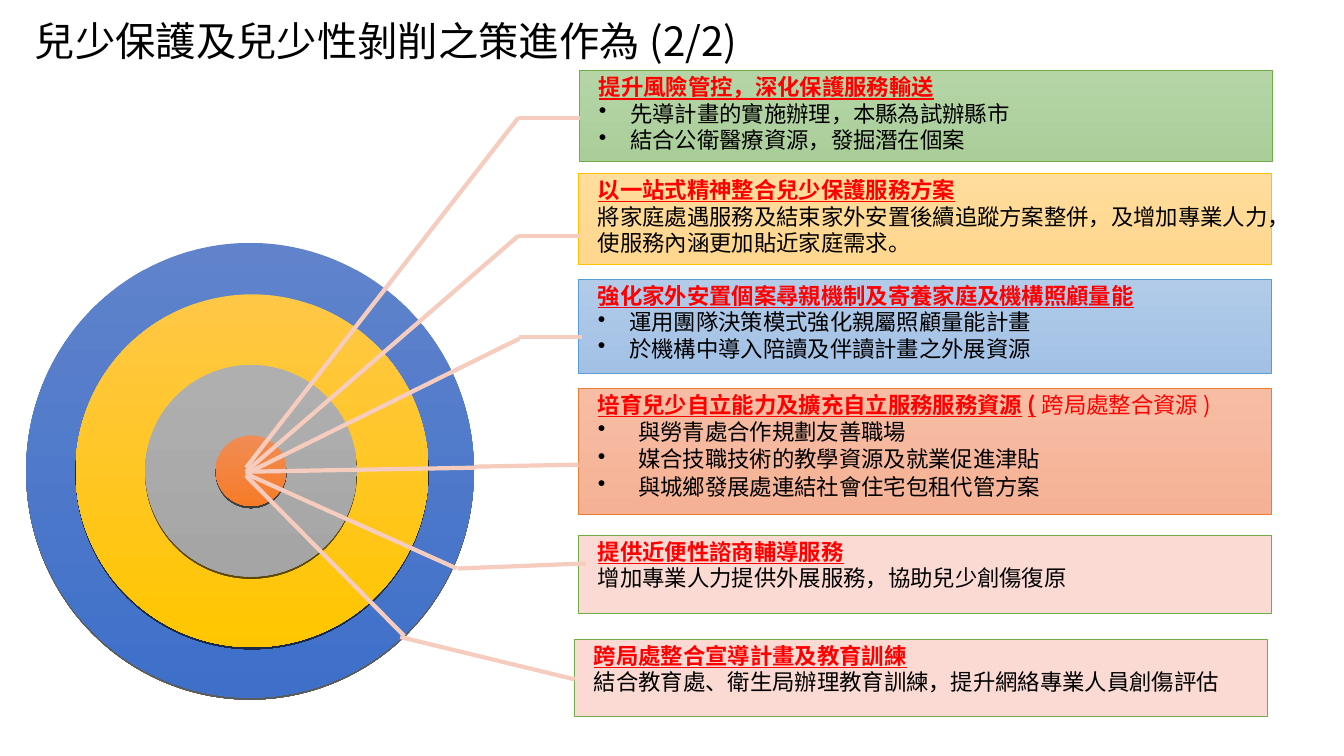
from lxml import etree
from pptx import Presentation
from pptx.dml.color import RGBColor
from pptx.enum.shapes import MSO_CONNECTOR, MSO_SHAPE
from pptx.enum.text import MSO_ANCHOR, PP_ALIGN
from pptx.oxml import parse_xml
from pptx.oxml.ns import nsdecls, qn
from pptx.util import Inches, Pt

LINE = MSO_CONNECTOR.STRAIGHT
RECT, OVAL = MSO_SHAPE.RECTANGLE, MSO_SHAPE.OVAL
TOP, MIDDLE = MSO_ANCHOR.TOP, MSO_ANCHOR.MIDDLE
LEFT, CENTER = PP_ALIGN.LEFT, PP_ALIGN.CENTER

FONT = "Noto Sans CJK TC"
COLS, ROWS = 133.3, 75  # grid cells across and down the slide

BLACK = RGBColor(0x00, 0x00, 0x00)
RED = RGBColor(0xFF, 0x00, 0x00)
PINK = RGBColor(0xF6, 0xCC, 0xBE)
ROSE = RGBColor(0xFA, 0xDA, 0xD3)
GREEN = RGBColor(0x70, 0xAD, 0x47)
GOLD = RGBColor(0xFF, 0xC0, 0x00)
BLUE = RGBColor(0x5B, 0x9B, 0xD5)
RUST = RGBColor(0xED, 0x7D, 0x31)
LEAF = (RGBColor(0xB5, 0xD5, 0xA7), RGBColor(0xAA, 0xCE, 0x99))
SAND = (RGBColor(0xFF, 0xDD, 0x9C), RGBColor(0xFF, 0xD7, 0x8E))
SKY = (RGBColor(0xB1, 0xCB, 0xE9), RGBColor(0xA3, 0xC1, 0xE5))
PEACH = (RGBColor(0xF7, 0xBD, 0xA4), RGBColor(0xF5, 0xB1, 0x95))
PLAIN = (ROSE, ROSE)

# Rings: left, top, width, height, fill
RINGS = [
    (2.6, 24.1, 44.4, 45.1, (RGBColor(0x60, 0x83, 0xCB), RGBColor(0x3E, 0x70, 0xCA))),
    (7.5, 29.2, 35, 35, (RGBColor(0xFF, 0xC7, 0x46), RGBColor(0xFF, 0xC6, 0x00))),
    (14.4, 36.2, 21, 21, (RGBColor(0xAF, 0xAF, 0xAF), RGBColor(0xA5, 0xA5, 0xA5))),
    (21.4, 43.2, 7, 7, (RGBColor(0xF1, 0x8C, 0x55), RGBColor(0xF6, 0x7B, 0x28))),
]

# Cards: left, top, height, fill, edge, heading, side note, body, bullet indent
WIDE = 68.7
CARDS = [
    (57.5, 7, 9, LEAF, GREEN, "提升風險管控，深化保護服務輸送", "",
     ["先導計畫的實施辦理，本縣為試辦縣市", "結合公衛醫療資源，發掘潛在個案"], 3.1),
    (57.4, 17.2, 9, SAND, GOLD, "以一站式精神整合兒少保護服務方案", "",
     ["將家庭處遇服務及結束家外安置後續追蹤方案整併，及增加專業人力，使服務內涵更加貼近家庭需求。"], 0),
    (57.4, 27.7, 9.3, SKY, BLUE, "強化家外安置個案尋親機制及寄養家庭及機構照顧量能", "",
     ["運用團隊決策模式強化親屬照顧量能計畫", "於機構中導入陪讀及伴讀計畫之外展資源"], 3.1),
    (57.4, 38.5, 12.5, PEACH, RUST, "培育兒少自立能力及擴充自立服務服務資源(", "跨局處整合資源)",
     ["與勞青處合作規劃友善職場", "媒合技職技術的教學資源及就業促進津貼",
      "與城鄉發展處連結社會住宅包租代管方案"], 4),
    (57.4, 53.1, 7.8, PLAIN, GREEN, "提供近便性諮商輔導服務", "",
     ["增加專業人力提供外展服務，協助兒少創傷復原"], 0),
    (57, 63.4, 7.7, PLAIN, GREEN, "跨局處整合宣導計畫及教育訓練", "",
     ["結合教育處、衛生局辦理教育訓練，提升網絡專業人員創傷評估"], 0),
]

# Leaders: row at the hub, ray end, stub start, stub end
HUB = 24.4
LEADS = [
    (46.4, (51.4, 11.7), (51.4, 11.7), (57.5, 11.7)),
    (46.8, (51.4, 23.4), (51.4, 23.4), (57.5, 23.4)),
    (47, (51.5, 33.6), (51.5, 33.4), (57.7, 33.4)),
    (46.8, (47.1, 46.4), (47, 46.3), (57.4, 46.1)),
    (47, (45.3, 56.4), (45.4, 56.4), (58.1, 55.9)),
    (47.2, (40.1, 63.1), (39.7, 63.2), (57, 67.4)),
]


class Board:
    def __init__(self, deck):
        self.deck = deck
        self.slide = deck.slides.add_slide(deck.slide_layouts[5])

    def x(self, cols):
        return round(self.deck.slide_width * cols / COLS)

    def y(self, rows):
        return round(self.deck.slide_height * rows / ROWS)

    def box(self, x, y, w, h):
        return self.x(x), self.y(y), self.x(w), self.y(h)

    def style(self, font, size, color, bold=False):
        font.name, font.size, font.bold = FONT, Pt(size), bold
        font.underline = bold
        font.color.rgb = color

    def asian(self, para):
        for latin in para._p.findall(".//" + qn("a:latin")):
            latin.addnext(parse_xml(f'<a:ea {nsdecls("a")} typeface="{FONT}"/>'))

    def title(self, text, *area):
        head = self.slide.shapes.title
        head.left, head.top, head.width, head.height = self.box(*area)
        frame = head.text_frame
        frame.text = text
        frame.vertical_anchor = MIDDLE
        para = frame.paragraphs[0]
        para.alignment = CENTER
        self.style(para.font, 28.8, BLACK)
        self.asian(para)

    def shape(self, kind, area, fill, edge=None):
        item = self.slide.shapes.add_shape(kind, *self.box(*area))
        item.shadow.inherit = False
        if fill[0] == fill[1]:
            item.fill.solid()
            item.fill.fore_color.rgb = fill[0]
        else:
            item.fill.gradient()
            item.fill.gradient_angle = 270
            for stop, color in zip(item.fill.gradient_stops, fill):
                stop.color.rgb = color
        if edge is None:
            item.line.fill.background()
        else:
            item.line.color.rgb = edge
            item.line.width = Pt(0.5)
        return item

    def ring(self, x, y, w, h, fill):
        item = self.shape(OVAL, (x, y, w, h), fill)
        effects = item._element.spPr.find(qn("a:effectLst"))
        effects.append(parse_xml(
            f'<a:outerShdw {nsdecls("a")} dist="19050" dir="5400000">'
            '<a:srgbClr val="000000"><a:alpha val="63000"/></a:srgbClr></a:outerShdw>'))

    def card(self, x, y, h, fill, edge, head, note, body, indent):
        frame = self.shape(RECT, (x, y, WIDE, h), fill, edge).text_frame
        frame.word_wrap = True
        frame.vertical_anchor = TOP
        frame.margin_left = Inches(0.19)
        frame.margin_right = frame.margin_top = frame.margin_bottom = Inches(0.03)
        para = frame.paragraphs[0]
        para.add_run().text = head
        self.style(para.font, 16, RED, True)
        if note:
            run = para.add_run()
            run.text = note
            self.style(run.font, 16, RED)
        for text in body:
            para = frame.add_paragraph()
            para.text = text
            self.style(para.font, 16, BLACK)
            if note:
                para.space_before = Pt(0.5)
            if indent:
                self.bullet(para, indent)
        for para in frame.paragraphs:
            para.alignment = LEFT
            para.line_spacing = Pt(19)
            self.asian(para)

    def bullet(self, para, indent):
        props = para._p.get_or_add_pPr()
        props.set("marL", str(self.x(indent)))
        props.set("indent", str(-self.x(indent)))
        mark = parse_xml(f'<a:buChar {nsdecls("a")} char="•"/>')
        props.find(qn("a:defRPr")).addprevious(mark)

    def line(self, start, end):
        item = self.slide.shapes.add_connector(
            LINE, self.x(start[0]), self.y(start[1]), self.x(end[0]), self.y(end[1]))
        item.line.color.rgb = PINK
        item.line.width = Pt(3)
        etree.SubElement(item._element.spPr, qn("a:effectLst"))


def main():
    deck = Presentation()
    deck.slide_width, deck.slide_height = Inches(13.33), Inches(7.5)
    board = Board(deck)
    board.title("兒少保護及兒少性剝削之策進作為(2/2)", 0, 1, 76.6, 6.1)

    # Target
    for ring in RINGS:
        board.ring(*ring)

    # Cards with their leaders
    for card, (row, bend, start, end) in zip(CARDS, LEADS):
        board.card(*card)
        board.line(start, end)
        board.line(bend, (HUB, row))

    deck.save("out.pptx")


if __name__ == "__main__":
    main()
